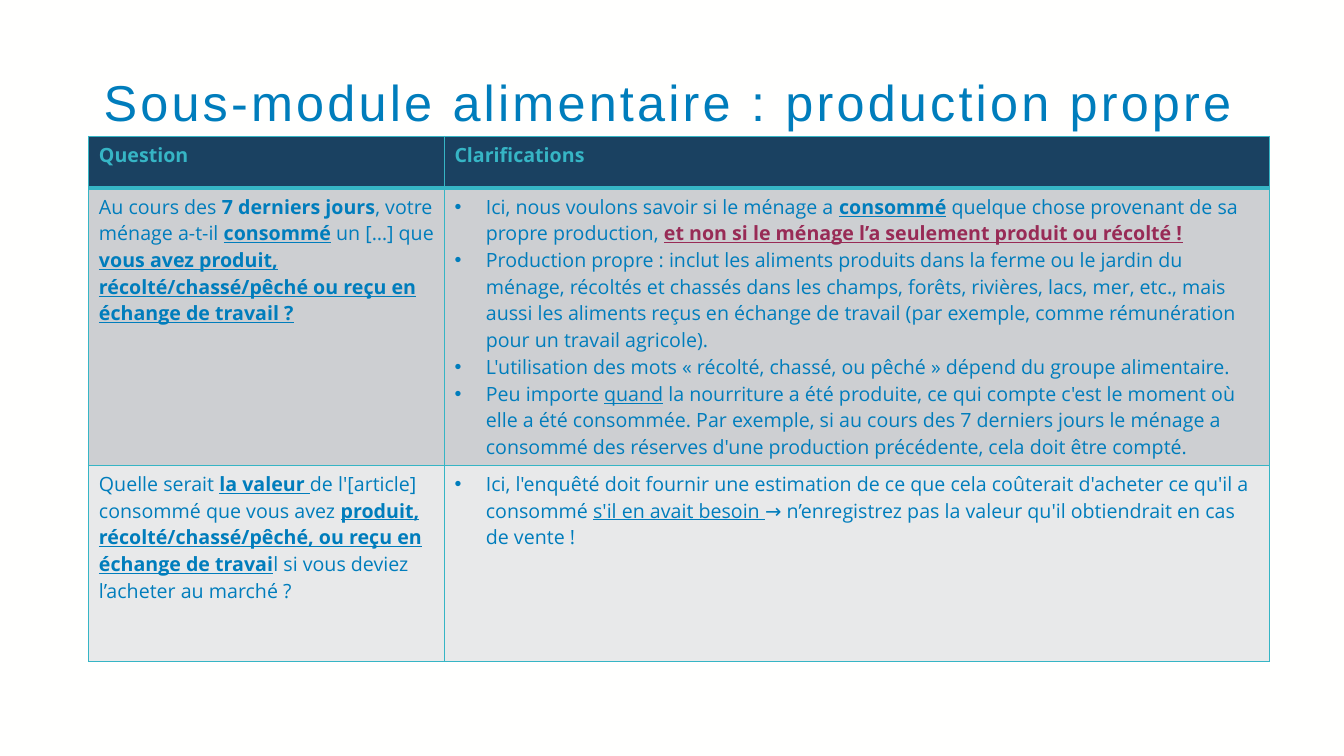
from dataclasses import dataclass
from lxml import etree
from pptx import Presentation
from pptx.dml.color import RGBColor
from pptx.enum.text import MSO_ANCHOR
from pptx.oxml.ns import qn
from pptx.util import Cm, Pt

TOP = MSO_ANCHOR.TOP


@dataclass(frozen=True)
class Theme:
    page: str = "FFFFFE"
    blue: str = "007DBC"
    teal: str = "36B5C5"
    navy: str = "1A4161"
    red: str = "982B56"
    dark: str = "CDCFD2"
    light: str = "E8E9EA"
    head: str = "Arial"
    body: str = "Open Sans"
    big: int = 36
    small: int = 14


theme = Theme()


def add_run(para, text, font, size, color, style=""):
    """Style letters: b for bold, u for underline."""
    run = para.add_run()
    run.text = text
    run.font.name = font
    run.font.size = Pt(size)
    run.font.color.rgb = RGBColor.from_string(color)
    run.font.bold = "b" in style
    run.font.underline = "u" in style
    return run


def add_edge(cell, side, width):
    props = cell._tc.get_or_add_tcPr()
    line = etree.SubElement(props, qn("a:" + side), w=str(Pt(width)))
    fill = etree.SubElement(line, qn("a:solidFill"))
    etree.SubElement(fill, qn("a:srgbClr"), val=theme.teal)


# Slide
deck = Presentation()
deck.slide_width, deck.slide_height = Cm(33.87), Cm(19.05)
slide = deck.slides.add_slide(deck.slide_layouts[6])
slide.background.fill.solid()
slide.background.fill.fore_color.rgb = RGBColor.from_string(theme.page)

# Table content: rows of cells, cells of paragraphs, paragraphs of runs
T, B, R = theme.teal, theme.blue, theme.red
rows = [
    [
        [[("Question", T, "b")]],
        [[("Clarifications", T, "b")]],
    ],
    [
        [[
            ("Au cours des ", B, ""),
            ("7 derniers jours", B, "b"),
            (", votre ménage a-t-il ", B, ""),
            ("consommé", B, "bu"),
            (" un […] que ", B, ""),
            ("vous avez produit, récolté/chassé/pêché ou reçu en échange "
             "de travail ?", B, "bu"),
        ]],
        [
            [
                ("Ici, nous voulons savoir si le ménage a ", B, ""),
                ("consommé", B, "bu"),
                (" quelque chose provenant de sa propre production, ", B, ""),
                ("et non si le ménage l’a seulement produit ou récolté !",
                 R, "bu"),
            ],
            [
                ("Production propre : inclut les aliments produits dans la "
                 "ferme ou le jardin du ménage, récoltés et chassés dans les "
                 "champs, forêts, rivières, lacs, mer, etc., mais aussi les "
                 "aliments reçus en échange de travail (par exemple, comme "
                 "rémunération pour un travail agricole).", B, ""),
            ],
            [
                ("L'utilisation des mots « récolté, chassé, ou pêché » "
                 "dépend du groupe alimentaire.", B, ""),
            ],
            [
                ("Peu importe ", B, ""),
                ("quand", B, "u"),
                (" la nourriture a été produite, ce qui compte c'est le "
                 "moment où elle a été consommée. Par exemple, si au cours "
                 "des 7 derniers jours le ménage a consommé des réserves "
                 "d'une production précédente, cela doit être compté.", B, ""),
            ],
        ],
    ],
    [
        [[
            ("Quelle serait ", B, ""),
            ("la valeur ", B, "bu"),
            ("de l'[article] consommé que vous avez ", B, ""),
            ("produit, récolté/chassé/pêché, ou reçu en échange de travai",
             B, "bu"),
            ("l si vous deviez l’acheter au marché ?", B, ""),
        ]],
        [[
            ("Ici, l'enquêté doit fournir une estimation de ce que cela "
             "coûterait d'acheter ce qu'il a consommé ", B, ""),
            ("s'il en avait besoin ", B, "u"),
            ("→ n’enregistrez pas la valeur qu'il obtiendrait en cas de "
             "vente !", B, ""),
        ]],
    ],
]
fills = [theme.navy, theme.dark, theme.light]
widths = [Cm(8.96), Cm(20.8)]
heights = [Cm(1.3), Cm(5.9), Cm(4.95)]

# Table
frame = slide.shapes.add_table(3, 2, Cm(2.24), Cm(3.44), sum(widths), sum(heights))
table = frame.table
table.horz_banding = False
for col, width in zip(table.columns, widths):
    col.width = width
for row, height in zip(table.rows, heights):
    row.height = height

for i, row in enumerate(rows):
    for j, paras in enumerate(row):
        cell = table.cell(i, j)
        for side in ("lnL", "lnR", "lnT", "lnB"):
            thick = (i, side) in ((0, "lnB"), (1, "lnT"))
            add_edge(cell, side, 3 if thick else 1)
        cell.fill.solid()
        cell.fill.fore_color.rgb = RGBColor.from_string(fills[i])
        for k, runs in enumerate(paras):
            box = cell.text_frame
            para = box.add_paragraph() if k else box.paragraphs[0]
            # Bullets in the body of the second column
            if i and j:
                props = para._p.get_or_add_pPr()
                props.set("marL", str(Cm(0.79)))
                props.set("indent", str(-Cm(0.79)))
                etree.SubElement(props, qn("a:buFont"), typeface="Arial")
                etree.SubElement(props, qn("a:buChar"), char="•")
            for text, color, style in runs:
                add_run(para, text, theme.body, theme.small, color, style)

# Title
title = slide.shapes.add_textbox(Cm(2.36), Cm(1.85), Cm(29.29), Cm(3.2))
title.text_frame.word_wrap = True
title.text_frame.vertical_anchor = TOP
para = title.text_frame.paragraphs[0]
para.line_spacing = 0.9
run = add_run(para, "Sous-module alimentaire : production propre",
              theme.head, theme.big, theme.blue)
run._r.get_or_add_rPr().set("spc", "230")

deck.save("out.pptx")
